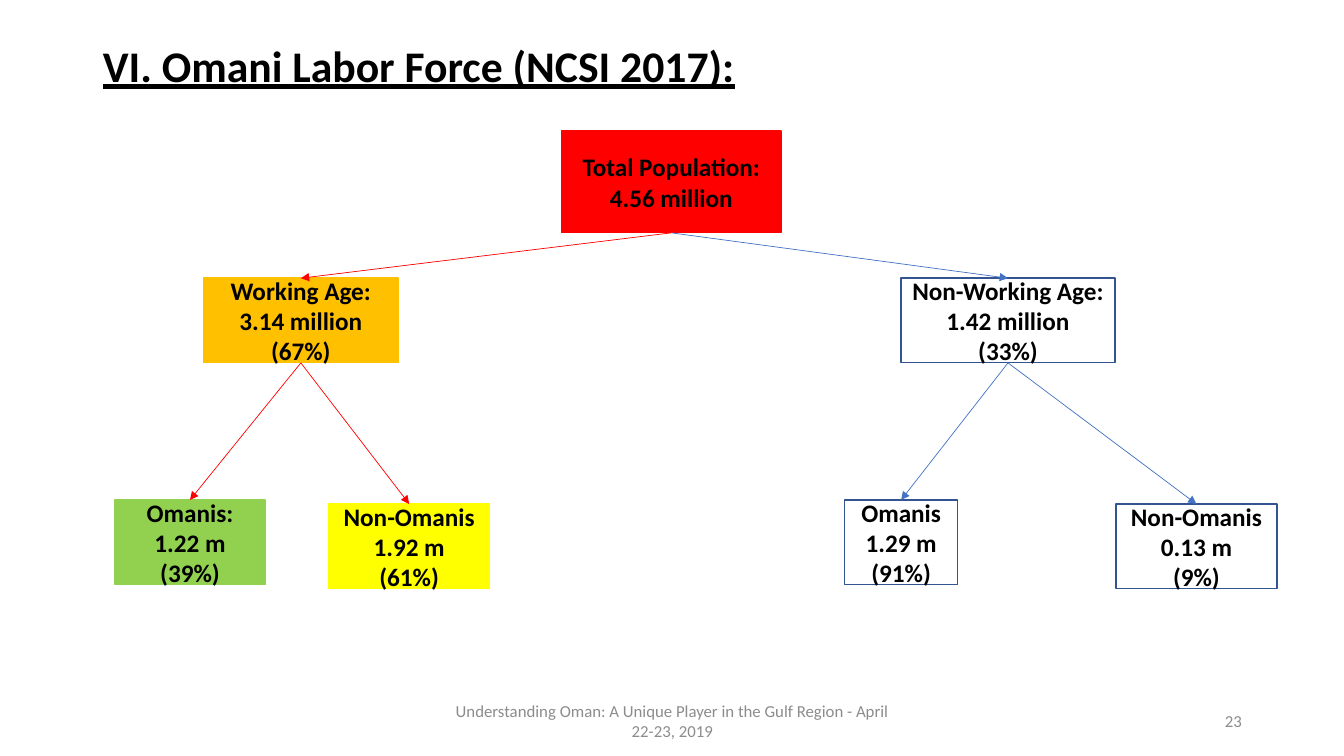
from pptx import Presentation
from pptx.dml.color import RGBColor
from pptx.enum.shapes import MSO_CONNECTOR, MSO_SHAPE
from pptx.enum.text import MSO_ANCHOR, MSO_AUTO_SIZE, PP_ALIGN
from pptx.oxml.ns import qn
from pptx.util import Inches, Pt
from lxml.etree import SubElement

COLORS = {
    "black": "000000", "white": "FFFFFF", "gray": "8C8C8C",
    "red": "FF0000", "orange": "FFC000", "green": "92D050",
    "yellow": "FFFF00", "navy": "325491", "blue": "4472C4",
}
TITLE_ONLY = 5
BOTTOM, TOP = 2, 0


def color(name):
    return RGBColor.from_string(COLORS[name])


def write(shape, lines, size, ink, align, bold=False, underline=None):
    frame = shape.text_frame
    frame.word_wrap = True
    frame.auto_size = MSO_AUTO_SIZE.NONE
    frame.vertical_anchor = MSO_ANCHOR.MIDDLE
    for index, line in enumerate(lines):
        para = frame.add_paragraph() if index else frame.paragraphs[0]
        para.alignment = align
        span = para.add_run()
        span.text = line
        span.font.name = "Calibri"
        span.font.size = Pt(size)
        span.font.bold = bold
        span.font.underline = underline
        span.font.color.rgb = color(ink)


deck = Presentation()
deck.slide_width, deck.slide_height = Inches(40 / 3), Inches(7.5)
page = deck.slides.add_slide(deck.slide_layouts[TITLE_ONLY])

# Title
title = page.shapes.title
title.left, title.top = Inches(0.92), Inches(0.39)
title.width, title.height = Inches(11.5), Inches(0.57)
write(title, ["VI. Omani Labor Force (NCSI 2017):"], 31.2, "black",
      PP_ALIGN.LEFT, bold=True, underline=True)
title.text_frame.paragraphs[0].line_spacing = 0.9

# Population boxes: left, top, width, height, fill, outline, lines
population = {
    "total": (5.57, 1.3, 2.18, 1.01, "red", "red",
              ["Total Population:", "4.56 million"]),
    "working": (2.02, 2.76, 1.93, 0.84, "orange", "orange",
                ["Working Age:", "3.14 million (67%)"]),
    "non-working": (8.94, 2.76, 2.12, 0.84, "white", "navy",
                    ["Non-Working Age:", "1.42 million", "(33%)"]),
    "working Omanis": (1.14, 4.96, 1.49, 0.84, "green", "green",
                       ["Omanis:", "1.22 m (39%)"]),
    "non-working Omanis": (8.38, 4.96, 1.12, 0.84, "white", "navy",
                           ["Omanis", "1.29 m", "(91%)"]),
    "working Non-Omanis": (3.26, 5, 1.6, 0.84, "yellow", "yellow",
                           ["Non-Omanis", "1.92 m", "(61%)"]),
    "non-working Non-Omanis": (11.07, 5, 1.6, 0.84, "white", "navy",
                               ["Non-Omanis", "0.13 m", "(9%)"]),
}
boxes = {}
for name, (left, top, width, height, fill, outline, lines) in population.items():
    box = page.shapes.add_shape(MSO_SHAPE.RECTANGLE, Inches(left), Inches(top),
                                Inches(width), Inches(height))
    box.shadow.inherit = False
    box.fill.solid()
    box.fill.fore_color.rgb = color(fill)
    box.line.color.rgb = color(outline)
    box.line.width = Pt(1)
    write(box, lines, 18, "black", PP_ALIGN.CENTER, bold=True)
    boxes[name] = box

# Arrows from each group to its parts, red on the working-age side
branches = [
    ("total", "working", "red"),
    ("total", "non-working", "blue"),
    ("working", "working Omanis", "red"),
    ("working", "working Non-Omanis", "red"),
    ("non-working", "non-working Omanis", "blue"),
    ("non-working", "non-working Non-Omanis", "blue"),
]
for group_name, part_name, ink in branches:
    group, part = boxes[group_name], boxes[part_name]
    arrow = page.shapes.add_connector(
        MSO_CONNECTOR.STRAIGHT,
        group.left + group.width // 2, group.top + group.height,
        part.left + part.width // 2, part.top)
    arrow.begin_connect(group, BOTTOM)
    arrow.end_connect(part, TOP)
    arrow.line.color.rgb = color(ink)
    arrow.line.width = Pt(0.5)
    SubElement(arrow.line._get_or_add_ln(), qn("a:tailEnd"), type="triangle")
    SubElement(arrow._element.spPr, qn("a:effectLst"))

# Footer and page number
footers = [
    (4.42, 4.5, PP_ALIGN.CENTER,
     "Understanding Oman: A Unique Player in the Gulf Region - April 22-23, 2019"),
    (9.42, 3, PP_ALIGN.RIGHT, "23"),
]
for left, width, align, text in footers:
    footer = page.shapes.add_textbox(Inches(left), Inches(6.95),
                                     Inches(width), Inches(0.4))
    write(footer, [text], 12, "gray", align)

deck.save("out.pptx")
